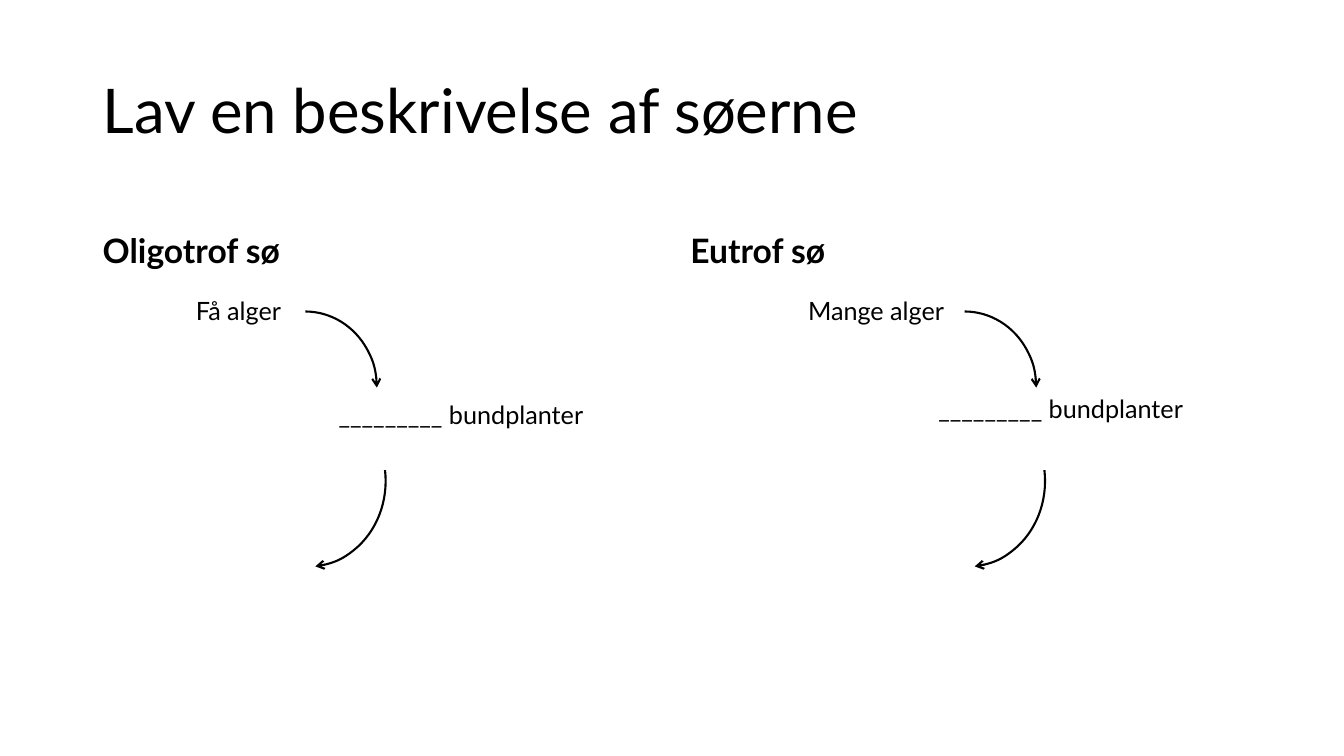
import pptx
import pptx.dml.color
import pptx.enum.shapes
import pptx.enum.text
import pptx.oxml
import pptx.util

Pt = pptx.util.Pt
Anchor = pptx.enum.text.MSO_ANCHOR
Fit = pptx.enum.text.MSO_AUTO_SIZE
FONT = "Lato"
COLORS = {"ink": "000000", "page": "FFFFFF"}
SHIFT = 471


def color(name):
    return pptx.dml.color.RGBColor.from_string(COLORS[name])


def write(shape, text, size, bold=False):
    frame = shape.text_frame
    frame.text = text
    frame.word_wrap = True
    para = frame.paragraphs[0]
    para.alignment = pptx.enum.text.PP_ALIGN.LEFT
    para.space_before = Pt(0)
    font = para.runs[0].font
    font.name = FONT
    font.size = Pt(size)
    font.bold = bold
    font.color.rgb = color("ink")
    return frame


def fill_holder(holder, box, text, size, anchor, bold=False):
    holder.left, holder.top, holder.width, holder.height = map(Pt, box)
    frame = write(holder, text, size, bold)
    frame.auto_size = Fit.NONE
    frame.vertical_anchor = anchor
    frame.paragraphs[0].line_spacing = 0.9


def add_label(slide, box, text):
    label = slide.shapes.add_textbox(*map(Pt, box))
    write(label, text, 18).auto_size = Fit.SHAPE_TO_FIT_TEXT


def add_arc(slide, box, turn=0):
    kind = pptx.enum.shapes.MSO_SHAPE.ARC
    arc = slide.shapes.add_shape(kind, *map(Pt, box))
    arc.rotation = turn
    arc.shadow.inherit = False
    arc.fill.background()
    arc.line.color.rgb = color("ink")
    arc.line.width = Pt(1.5)
    line = arc.line._get_or_add_ln()
    tail = pptx.oxml.parse_xml(
        '<a:tailEnd xmlns:a="http://schemas.openxmlformats.org/drawingml/2006/main"'
        ' type="arrow"/>')
    line.append(tail)


def add_lake(slide, holder, head, algae, plants, shift):
    box, text = head
    fill_holder(holder, box, text, 24, Anchor.BOTTOM, True)
    left, text = algae
    add_label(slide, (left, 207.4, 136, 29), text)
    add_arc(slide, (167 + shift, 222.5, 102.2, 108.7))
    left, top = plants
    add_label(slide, (left, top, 199.4, 29), "_________ bundplanter")
    add_arc(slide, (155.5 + shift, 285.1, 125.3, 114.5), 83.5)


def main():
    deck = pptx.Presentation()
    deck.slide_width, deck.slide_height = Pt(960), Pt(540)
    slide = deck.slides.add_slide(deck.slide_layouts[4])
    slide.background.fill.solid()
    slide.background.fill.fore_color.rgb = color("page")
    holders = {h.placeholder_format.idx: h for h in slide.placeholders}
    for idx in (2, 4):
        element = holders[idx].element
        element.getparent().remove(element)
    fill_holder(slide.shapes.title, (66, 28.8, 828, 104.4),
                "Lav en beskrivelse af søerne", 44, Anchor.MIDDLE)
    add_lake(slide, holders[1], ((66.2, 132.4, 406.1, 64.9), "Oligotrof sø"),
             (132.8, "Få alger"), (234.8, 281.7), 0)
    add_lake(slide, holders[3], ((486, 132.4, 408.2, 64.9), "Eutrof sø"),
             (570.1, "Mange alger"), (663.2, 277.4), SHIFT)
    deck.save("out.pptx")


if __name__ == "__main__":
    main()
